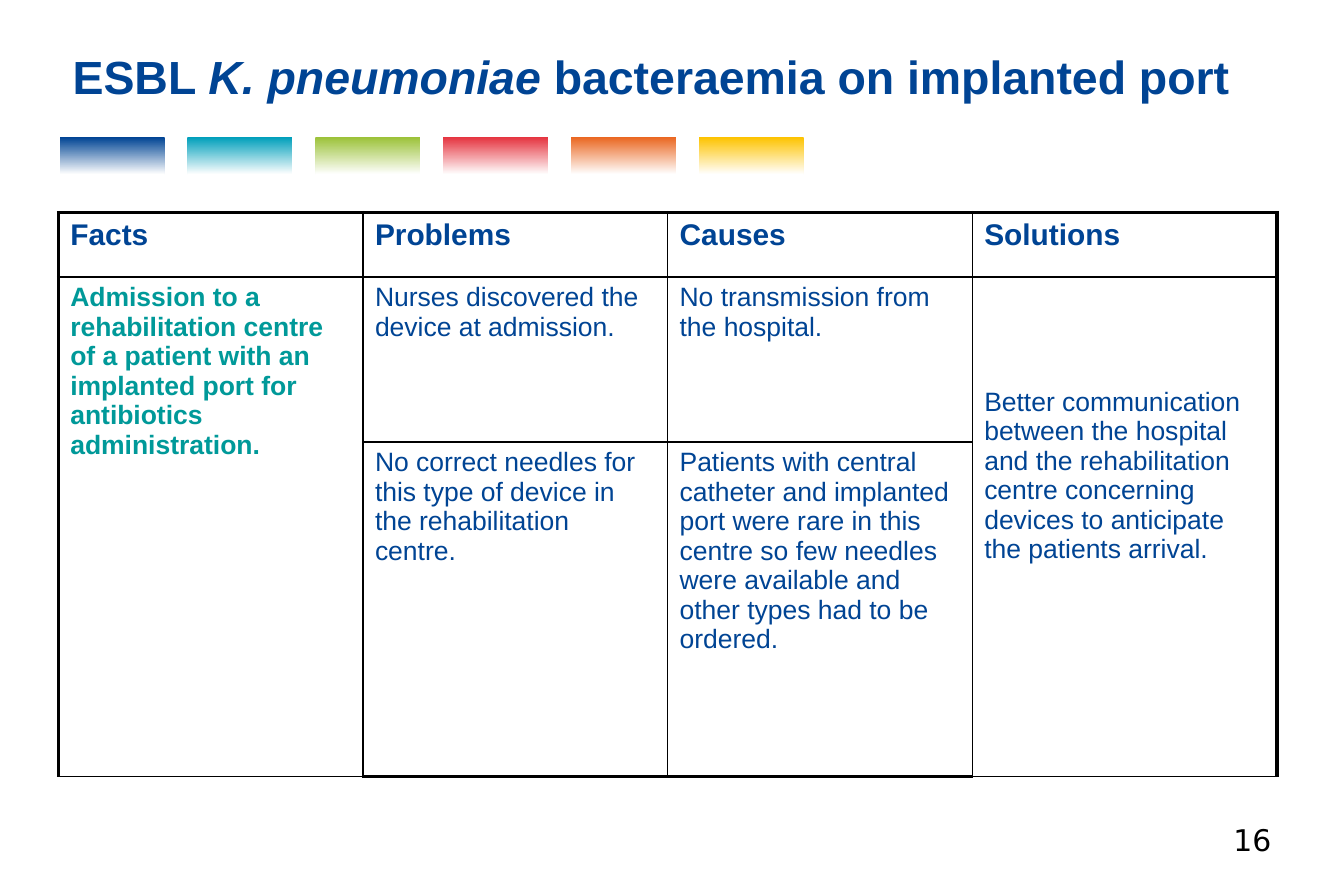
from dataclasses import dataclass

from lxml.etree import SubElement
from pptx import Presentation
from pptx.dml.color import RGBColor
from pptx.enum.shapes import MSO_SHAPE
from pptx.enum.text import MSO_ANCHOR, PP_ALIGN
from pptx.oxml.ns import qn
from pptx.util import Pt


@dataclass(frozen=True)
class Theme:
    font: str = "Arial"
    number_font: str = "DejaVu Sans"
    blue: str = "004494"
    teal: str = "009999"
    black: str = "000000"
    white: str = "FFFFFF"
    swatches: tuple = ("004494", "009FBB", "9CC239", "E53540", "EA6721", "FDC300")
    title: float = 28
    heading: float = 18
    body: float = 16
    outer_line: float = 2.25
    inner_line: float = 1


class SlideBuilder:
    def __init__(self, prs, theme):
        self.theme = theme
        self.slide = prs.slides.add_slide(prs.slide_layouts[6])

    def format_run(self, r, size, color, bold=False, italic=False, font=None):
        r.font.name = font or self.theme.font
        r.font.size = Pt(size)
        r.font.bold = bold
        r.font.italic = italic
        r.font.color.rgb = RGBColor.from_string(color)

    def text(self, box, parts, size, color, bold=False, font=None,
             align=PP_ALIGN.LEFT, anchor=MSO_ANCHOR.TOP):
        """Each part is a (text, italic) pair."""
        sp = self.slide.shapes.add_textbox(*map(Pt, box))
        tf = sp.text_frame
        tf.word_wrap = True
        tf.vertical_anchor = anchor
        p = tf.paragraphs[0]
        p.alignment = align
        for words, italic in parts:
            r = p.add_run()
            r.text = words
            self.format_run(r, size, color, bold, italic, font)

    def swatch(self, box, color):
        sp = self.slide.shapes.add_shape(MSO_SHAPE.RECTANGLE, *map(Pt, box))
        sp.shadow.inherit = False
        sp.line.fill.background()
        sp.fill.gradient()
        sp.fill.gradient_angle = 270
        for stop, shade in zip(sp.fill.gradient_stops, (color, self.theme.white)):
            stop.color.rgb = RGBColor.from_string(shade)

    def border(self, cell, side, width):
        ln = SubElement(cell._tc.get_or_add_tcPr(), qn(f"a:ln{side}"), w=str(Pt(width)))
        fill = SubElement(ln, qn("a:solidFill"))
        SubElement(fill, qn("a:srgbClr"), val=self.theme.black)

    def table(self, left, top, widths, heights):
        n_rows, n_cols = len(heights), len(widths)
        frame = self.slide.shapes.add_table(
            n_rows, n_cols, Pt(left), Pt(top), Pt(sum(widths)), Pt(sum(heights)))
        table = frame.table
        table.first_row = table.horz_banding = False
        for column, width in zip(table.columns, widths):
            column.width = Pt(width)
        for row, height in zip(table.rows, heights):
            row.height = Pt(height)
        # Thick frame, thin inner lines
        for i in range(n_rows):
            for j in range(n_cols):
                cell = table.cell(i, j)
                edges = {"L": j == 0, "R": j == n_cols - 1,
                         "T": i == 0, "B": i == n_rows - 1}
                for side, outer in edges.items():
                    width = self.theme.outer_line if outer else self.theme.inner_line
                    self.border(cell, side, width)
                cell.fill.background()
        return table

    def cell_text(self, cell, words, size, color, bold=False, margin_top=3.6):
        cell.margin_top = Pt(margin_top)
        cell.text_frame.text = words
        self.format_run(cell.text_frame.paragraphs[0].runs[0], size, color, bold)


def main():
    theme = Theme()
    prs = Presentation()
    prs.slide_width, prs.slide_height = Pt(810), Pt(540)
    s = SlideBuilder(prs, theme)

    # Colour strip
    for i, color in enumerate(theme.swatches):
        s.swatch((36 + 77 * i, 82.8, 63.3, 22.3), color)

    # Title
    s.text((36.7, 15.1, 731.5, 61.2),
           [("ESBL ", False), ("K. pneumoniae", True),
            (" bacteraemia on implanted port", False)],
           theme.title, theme.blue, bold=True, anchor=MSO_ANCHOR.MIDDLE)

    # Case table
    table = s.table(35.2, 128, [183.6] * 4, [39, 99.4, 201.6])
    for j, heading in enumerate(("Facts", "Problems", "Causes", "Solutions")):
        s.cell_text(table.cell(0, j), heading, theme.heading, theme.blue, bold=True)
    for j in (0, 3):
        table.cell(1, j).merge(table.cell(2, j))
    s.cell_text(table.cell(1, 0),
                "Admission to a rehabilitation centre of a patient with an "
                "implanted port for antibiotics administration.",
                theme.body, theme.teal, bold=True)
    findings = {
        (1, 1): "Nurses discovered the device at admission.",
        (1, 2): "No transmission from the hospital.",
        (2, 1): "No correct needles for this type of device in the "
                "rehabilitation centre.",
        (2, 2): "Patients with central catheter and implanted port were rare in "
                "this centre so few needles were available and other types had "
                "to be ordered.",
    }
    for (i, j), words in findings.items():
        s.cell_text(table.cell(i, j), words, theme.body, theme.blue)
    s.cell_text(table.cell(1, 3),
                "Better communication between the hospital and the rehabilitation "
                "centre concerning devices to anticipate the patients arrival.",
                theme.body, theme.blue, margin_top=66.6)

    # Slide number
    s.text((618.5, 491.8, 154.8, 36), [("16", False)], theme.heading, theme.black,
           font=theme.number_font, align=PP_ALIGN.RIGHT)

    prs.save("out.pptx")


if __name__ == "__main__":
    main()
